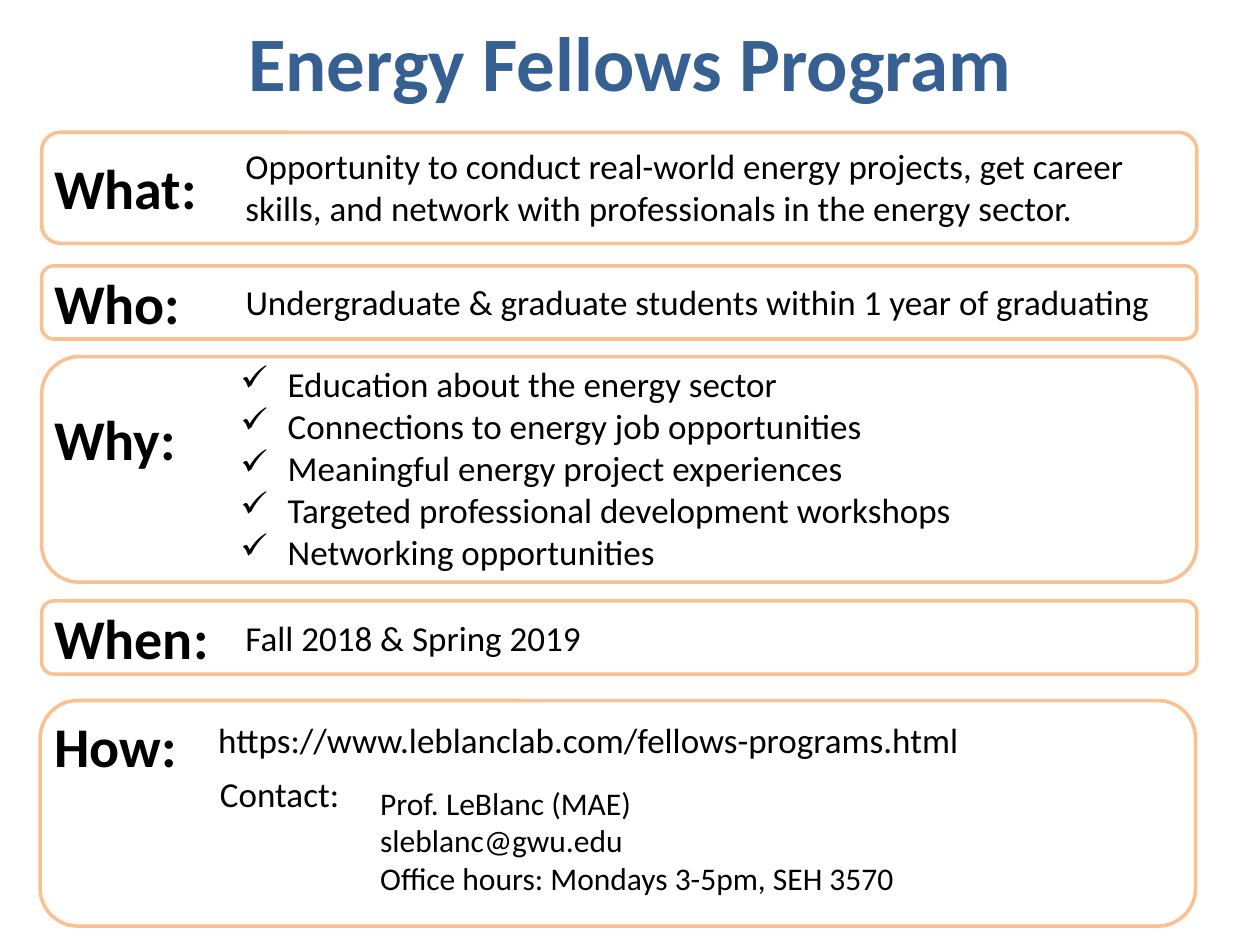
from lxml.etree import SubElement
from pptx import Presentation
from pptx.dml.color import RGBColor
from pptx.enum.shapes import MSO_SHAPE as Shape
from pptx.enum.text import MSO_ANCHOR as Anchor, MSO_AUTO_SIZE as AutoSize, PP_ALIGN as Align
from pptx.oxml.ns import qn
from pptx.util import Pt

COLORS = {"title": "376092", "text": "000000", "frame": "FAC090"}
LABEL = {"size": Pt(32), "bold": True}
BODY = {"size": Pt(20), "bold": False}
DETAIL = {"size": Pt(18), "bold": False}
TITLE = {"size": Pt(44), "bold": True}
LEFT, FRAME_WIDTH = 23.8, 660.2

# label, label box (top, width), frame (left, top, height)
SECTIONS = [
    ("What:", (84.2, 97.2), (LEFT, 75.6, 63.4)),
    ("Who:", (149.8, 87.8), (LEFT, 151.9, 41.8)),
    ("Why:", (227.5, 85), (LEFT, 203.8, 128.9)),
    ("When:", (341.3, 103.7), (LEFT, 343.4, 41.8)),
    ("How:", (403.2, 85.7), (23, 400.3, 128.9)),
]

BENEFITS = [
    "Education about the energy sector",
    "Connections to energy job opportunities",
    "Meaningful energy project experiences",
    "Targeted professional development workshops",
    "Networking opportunities",
]

CONTACT = [
    "Prof. LeBlanc (MAE)",
    "sleblanc@gwu.edu",
    "Office hours: Mondays 3-5pm, SEH 3570",
]

# lines, box (left, top, width, height), font, wrap
DETAILS = [
    (["Opportunity to conduct real-world energy projects, get career skills, "
      "and network with professionals in the energy sector."],
     (133.2, 79.2, 520.6, 55.7), BODY, True),
    (["Undergraduate & graduate students within 1 year of graduating"],
     (133.2, 157, 553, 31.5), BODY, False),
    (["Fall 2018 & Spring 2019"], (133.2, 348.5, 208, 31.5), BODY, False),
    (["https://www.leblanclab.com/fellows-programs.html"],
     (117.6, 407, 442, 31.5), BODY, False),
    (["Contact:"], (118.6, 437.8, 83.5, 31.5), BODY, False),
    (CONTACT, (210.2, 444.2, 311.8, 72.7), DETAIL, False),
]


def add_text(s, lines, box, font, wrap=False, color="text"):
    tb = s.shapes.add_textbox(*map(Pt, box))
    tf = tb.text_frame
    tf.word_wrap = wrap
    tf.auto_size = AutoSize.SHAPE_TO_FIT_TEXT
    for i, line in enumerate(lines):
        p = tf.paragraphs[0] if i == 0 else tf.add_paragraph()
        r = p.add_run()
        r.text = line
        for name, value in {"name": "Calibri", **font}.items():
            setattr(r.font, name, value)
        r.font.color.rgb = RGBColor.from_string(COLORS[color])
    return tf


def add_title(s, text):
    tf = add_text(s, [text], (36, 12.2, 648, 44.6), TITLE, True, "title")
    tf.auto_size = AutoSize.NONE
    tf.vertical_anchor = Anchor.MIDDLE
    tf.paragraphs[0].alignment = Align.CENTER


def add_checklist(s, lines, box):
    for p in add_text(s, lines, box, BODY).paragraphs:
        pPr = p._p.get_or_add_pPr()
        pPr.set("marL", str(Pt(27)))
        pPr.set("indent", str(-Pt(27)))
        SubElement(pPr, qn("a:buChar"), char="✓")


def add_frame(s, left, top, height):
    sp = s.shapes.add_shape(Shape.ROUNDED_RECTANGLE, Pt(left), Pt(top),
                            Pt(FRAME_WIDTH), Pt(height))
    sp.shadow.inherit = False
    sp.fill.background()
    sp.line.color.rgb = RGBColor.from_string(COLORS["frame"])
    sp.line.width = Pt(2)


def main():
    prs = Presentation()
    prs.slide_width, prs.slide_height = Pt(720), Pt(540)
    s = prs.slides.add_slide(prs.slide_layouts[6])
    add_title(s, "Energy Fellows Program")
    for label, (top, width), frame in SECTIONS:
        add_frame(s, *frame)
        add_text(s, [label], (LEFT, top, width, 46), LABEL)
    for lines, box, font, wrap in DETAILS:
        add_text(s, lines, box, font, wrap)
    add_checklist(s, BENEFITS, (130.3, 203.8, 424, 128.2))
    prs.save("out.pptx")


if __name__ == "__main__":
    main()
